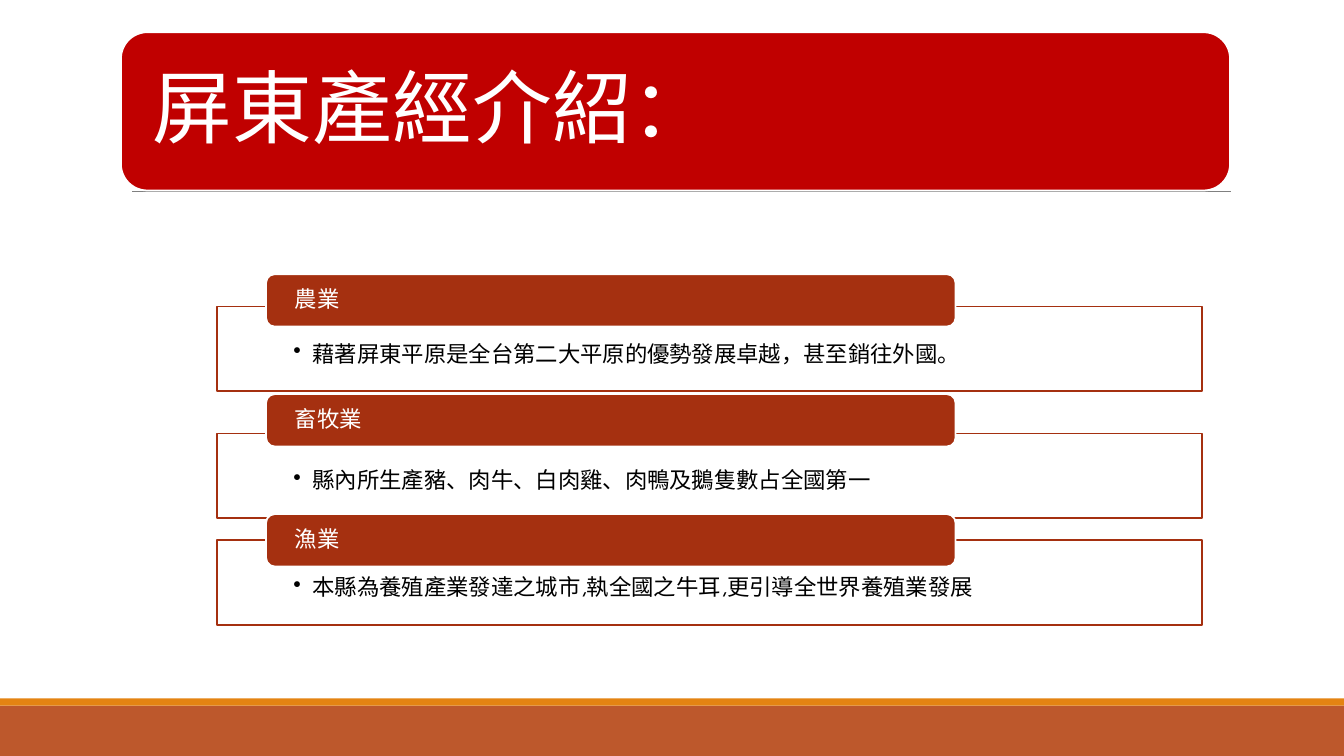
from dataclasses import dataclass

from lxml import etree
from pptx import Presentation
from pptx.dml.color import RGBColor
from pptx.enum import shapes, text
from pptx.oxml import ns
from pptx.util import Inches, Pt


@dataclass(frozen=True)
class Theme:
    white: str = "FFFFFF"
    black: str = "000000"
    title_red: str = "C00000"
    brick: str = "A53010"
    footer: str = "BD582C"
    footer_edge: str = "E48312"
    rule: str = "808080"
    title_font: str = "Calibri"
    body_font: str = "TeX Gyre Adventor"
    title_size: int = 57
    body_size: int = 16
    outline: float = 1.25
    rule_width: float = 0.5


THEME = Theme()
TITLE = "屏東產經介紹："
# Industry, description, top of its frame
INDUSTRIES = [
    ("農業", "藉著屏東平原是全台第二大平原的優勢發展卓越，甚至銷往外國。", 3.04),
    ("畜牧業", "縣內所生產豬、肉牛、白肉雞、肉鴨及鵝隻數占全國第一", 4.3),
    ("漁業", "本縣為養殖產業發達之城市,執全國之牛耳,更引導全世界養殖業發展", 5.36),
]
TAB_TOP, TAB_PITCH = 2.72, 1.19


def add_block(slide, preset, box, fill, line=None):
    block = slide.shapes.add_shape(preset, *map(Inches, box))
    block.shadow.inherit = False
    block.fill.solid()
    block.fill.fore_color.rgb = RGBColor.from_string(fill)
    if line:
        block.line.color.rgb = RGBColor.from_string(line)
        block.line.width = Pt(THEME.outline)
    else:
        block.line.fill.background()
    return block


def write(block, wording, font, size, color, insets, anchor, after):
    """Fill a block with one left-aligned paragraph; after is a share of the size."""
    frame = block.text_frame
    frame.word_wrap = True
    frame.vertical_anchor = anchor
    (frame.margin_left, frame.margin_top,
     frame.margin_right, frame.margin_bottom) = map(Inches, insets)
    paragraph = frame.paragraphs[0]
    paragraph.text = wording
    paragraph.alignment = text.PP_ALIGN.LEFT
    paragraph.line_spacing = 0.9
    paragraph.space_after = Pt(size * after)
    paragraph.font.name = font
    paragraph.font.size = Pt(size)
    paragraph.font.color.rgb = RGBColor.from_string(color)
    return paragraph


def add_bullet(paragraph, indent):
    properties = paragraph._p.get_or_add_pPr()
    properties.set("marL", str(Inches(indent)))
    properties.set("indent", str(-Inches(indent)))
    bullet = etree.Element(ns.qn("a:buChar"), char="•")
    properties.insert_element_before(bullet, "a:tabLst", "a:defRPr", "a:extLst")


def set_opacity(block, percent):
    color = block.fill._xPr.find(".//" + ns.qn("a:srgbClr"))
    etree.SubElement(color, ns.qn("a:alpha"), val=str(percent * 1000))


def add_backdrop(slide, width, height):
    rect = shapes.MSO_SHAPE.RECTANGLE
    add_block(slide, rect, (0, height - 0.5, width, 0.5), THEME.footer)
    add_block(slide, rect, (0, height - 0.57, width, 0.07), THEME.footer_edge)
    rule = slide.shapes.add_connector(
        shapes.MSO_CONNECTOR.STRAIGHT, *map(Inches, (1.31, 1.9, 12.21, 1.9)))
    rule.line.color.rgb = RGBColor.from_string(THEME.rule)
    rule.line.width = Pt(THEME.rule_width)
    etree.SubElement(rule._element.spPr, ns.qn("a:effectLst"))


def add_title(slide, box):
    banner = add_block(slide, shapes.MSO_SHAPE.ROUNDED_RECTANGLE, box,
                       THEME.title_red, THEME.white)
    write(banner, TITLE, THEME.title_font, THEME.title_size, THEME.white,
          (0.24, 0.24, 0.24, 0.24), text.MSO_ANCHOR.MIDDLE, 0.35)


def add_industry(slide, box, tab_top, industry, description):
    """Place a framed description with its name on a tab over the top edge."""
    left, _, width, _ = box
    frame = add_block(slide, shapes.MSO_SHAPE.RECTANGLE, box, THEME.white, THEME.brick)
    set_opacity(frame, 90)
    detail = write(frame, description, THEME.body_font, THEME.body_size, THEME.black,
                   (0.76, 0.36, 0.76, 0.12), text.MSO_ANCHOR.TOP, 0.15)
    add_bullet(detail, 0.19)
    tab = add_block(slide, shapes.MSO_SHAPE.ROUNDED_RECTANGLE,
                    (left + width * 0.05, tab_top, width * 0.7, 0.52),
                    THEME.brick, THEME.white)
    write(tab, industry, THEME.body_font, THEME.body_size, THEME.white,
          (0.26, 0, 0.26, 0), text.MSO_ANCHOR.MIDDLE, 0.35)


def main():
    width, height = 13.33, 7.5
    deck = Presentation()
    deck.slide_width, deck.slide_height = Inches(width), Inches(height)
    slide = deck.slides.add_slide(deck.slide_layouts[6])
    add_backdrop(slide, width, height)
    add_title(slide, (1.2, 0.32, 11, 1.57))
    for row, (industry, description, top) in enumerate(INDUSTRIES):
        add_industry(slide, (2.15, top, 9.77, 0.84), TAB_TOP + row * TAB_PITCH,
                     industry, description)
    deck.save("out.pptx")


if __name__ == "__main__":
    main()
